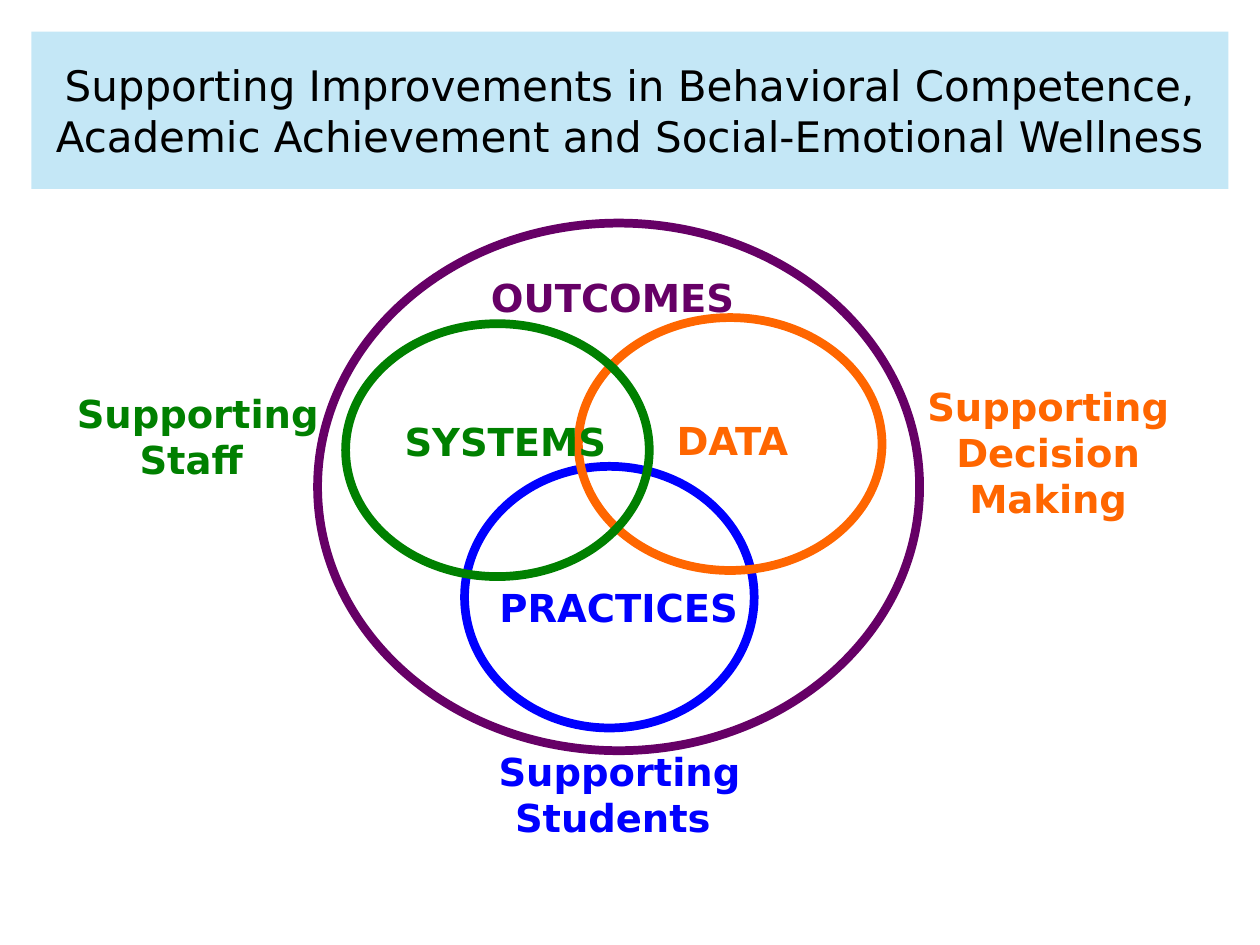
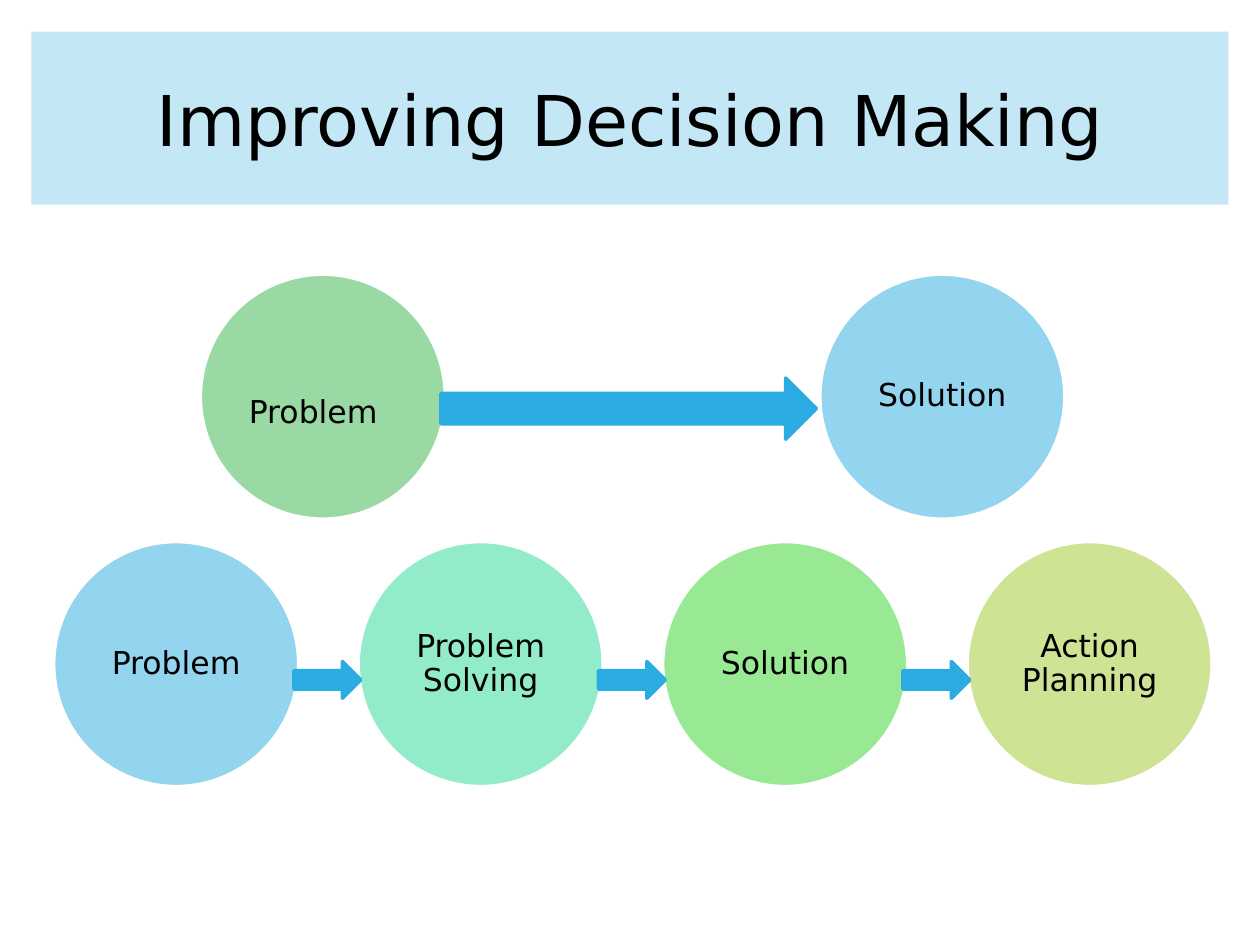
import pptx
import pptx.dml.color
import pptx.enum.shapes
import pptx.enum.text
import pptx.oxml
import pptx.oxml.ns
import pptx.util

Pt = pptx.util.Pt
SHAPE = pptx.enum.shapes.MSO_SHAPE
ALIGN = pptx.enum.text.PP_ALIGN
ANCHOR = pptx.enum.text.MSO_ANCHOR

FONT = "DejaVu Sans"
BLACK, WHITE = "000000", "FFFFFF"
BAND, SKY, ARROW = "A9DCF2", "28AAE0", "2AABE1"
GREEN, ORANGE, BLUE, PURPLE = "008000", "FF6600", "0000FF", "660066"
LABEL = {"size": Pt(22), "bold": True, "name": FONT}
STEP = {"size": Pt(18), "name": FONT}


def add_figure(page, kind, place, fill=None, line=None, width=0, opacity=100):
    """Add a preset shape; without a fill or line colour that part is left empty."""
    figure = page.shapes.add_shape(kind, *[Pt(length) for length in place])
    figure.shadow.inherit = False
    for part, colour in ((figure.fill, fill), (figure.line.fill, line)):
        if colour is None:
            part.background()
        else:
            part.solid()
            part.fore_color.rgb = pptx.dml.color.RGBColor.from_string(colour)
    if line:
        figure.line.width = Pt(width)
    if opacity < 100:
        tint = figure.fill._xPr.find(".//" + pptx.oxml.ns.qn("a:srgbClr"))
        alpha = pptx.oxml.parse_xml(
            f'<a:alpha {pptx.oxml.ns.nsdecls("a")} val="{opacity * 1000}"/>')
        tint.append(alpha)
    return figure


def write(box, text, style, colour, anchor=ANCHOR.TOP, align=ALIGN.CENTER,
          spacing=1.0, margins=(7.2, 3.6, 7.2, 3.6)):
    """Fill a shape with one paragraph per line; margins go left, top, right, bottom."""
    frame = box.text_frame
    frame.word_wrap = True
    frame.vertical_anchor = anchor
    for side, margin in zip(("left", "top", "right", "bottom"), margins):
        setattr(frame, f"margin_{side}", Pt(margin))
    frame.text = text
    for para in frame.paragraphs:
        para.alignment = align
        para.line_spacing = spacing
        for span in para.runs:
            for name, value in style.items():
                setattr(span.font, name, value)
            span.font.color.rgb = pptx.dml.color.RGBColor.from_string(colour)


deck = pptx.Presentation()
deck.slide_width, deck.slide_height = Pt(720), Pt(540)

# Both slides: a pale title band
pages = []
for title, size, height in (
    ("Supporting Improvements in Behavioral Competence, "
     "Academic Achievement and Social-Emotional Wellness", 24, 90),
    ("Improving Decision Making", 40, 99),
):
    page = deck.slides.add_slide(deck.slide_layouts[6])
    band = add_figure(page, SHAPE.RECTANGLE, (18, 18, 684, height), BAND, opacity=68)
    write(band, title, {"size": Pt(size), "name": FONT}, BLACK, ANCHOR.MIDDLE)
    pages.append(page)
venn_page, flow_page = pages

# Slide 1: overlapping rings, with the caption below them behind
caption = add_figure(venn_page, SHAPE.RECTANGLE, (198, 424, 312, 53.5), WHITE)
write(caption, "Supporting\nStudents ", LABEL, BLUE)

for colour, place in (
    (PURPLE, (181.5, 127.5, 344, 301.5)),
    (BLUE, (265.5, 266.5, 165.5, 149.5)),
    (ORANGE, (330.5, 181.5, 173.5, 144.5)),
    (GREEN, (197.5, 185, 173.5, 144.5)),
):
    add_figure(venn_page, SHAPE.OVAL, place, line=colour, width=5)

for text, colour, place, align in (
    ("Supporting\nStaff ", GREEN, (28, 219.5, 170, 75), ALIGN.CENTER),
    ("Supporting\nDecision\nMaking", ORANGE, (516, 215.3, 166, 84), ALIGN.CENTER),
    ("SYSTEMS", GREEN, (217.5, 235.5, 142.5, 31), ALIGN.CENTER),
    ("PRACTICES", BLUE, (256.5, 330, 194, 31), ALIGN.CENTER),
    ("DATA", ORANGE, (379.5, 234.7, 90, 31), ALIGN.LEFT),
    ("OUTCOMES", PURPLE, (260.5, 153.3, 179, 31), ALIGN.CENTER),
):
    label = venn_page.shapes.add_textbox(*[Pt(length) for length in place])
    write(label, text, LABEL, colour, align=align)

# Slide 2: a direct path above, a path with all its steps below
CIRCLE, FIRST_STEP, STEP_PITCH = 141, 30.2, 174
TOP_ROW, STEP_ROW = 156.2, 309
CENTRED, LOWERED = (7, 2.3, 7, 2.3), (0, 21.7, 11, 2.3)

steps = (("Problem", SKY), ("Problem Solving", "27DB96"),
         ("Solution", "34D328"), ("Action Planning", "A0C92A"))
circles = [(text, colour, FIRST_STEP + STEP_PITCH * index, STEP_ROW, CENTRED)
           for index, (text, colour) in enumerate(steps)]
circles += [("Problem", "38B54A", 114, TOP_ROW, LOWERED),
            ("Solution", SKY, 468, TOP_ROW, CENTRED)]
for text, colour, left, top, margins in circles:
    circle = add_figure(flow_page, SHAPE.OVAL, (left, top, CIRCLE, CIRCLE),
                        colour, WHITE, 3, opacity=50)
    write(circle, text, STEP, BLACK, ANCHOR.MIDDLE, spacing=0.9, margins=margins)

arrows = [(168 + STEP_PITCH * index, 378, 38.2, 21) for index in range(len(steps) - 1)]
arrows.append((252, 216, 214.5, 35))
for place in arrows:
    add_figure(flow_page, SHAPE.RIGHT_ARROW, place, ARROW, ARROW, 2)

deck.save("out.pptx")
